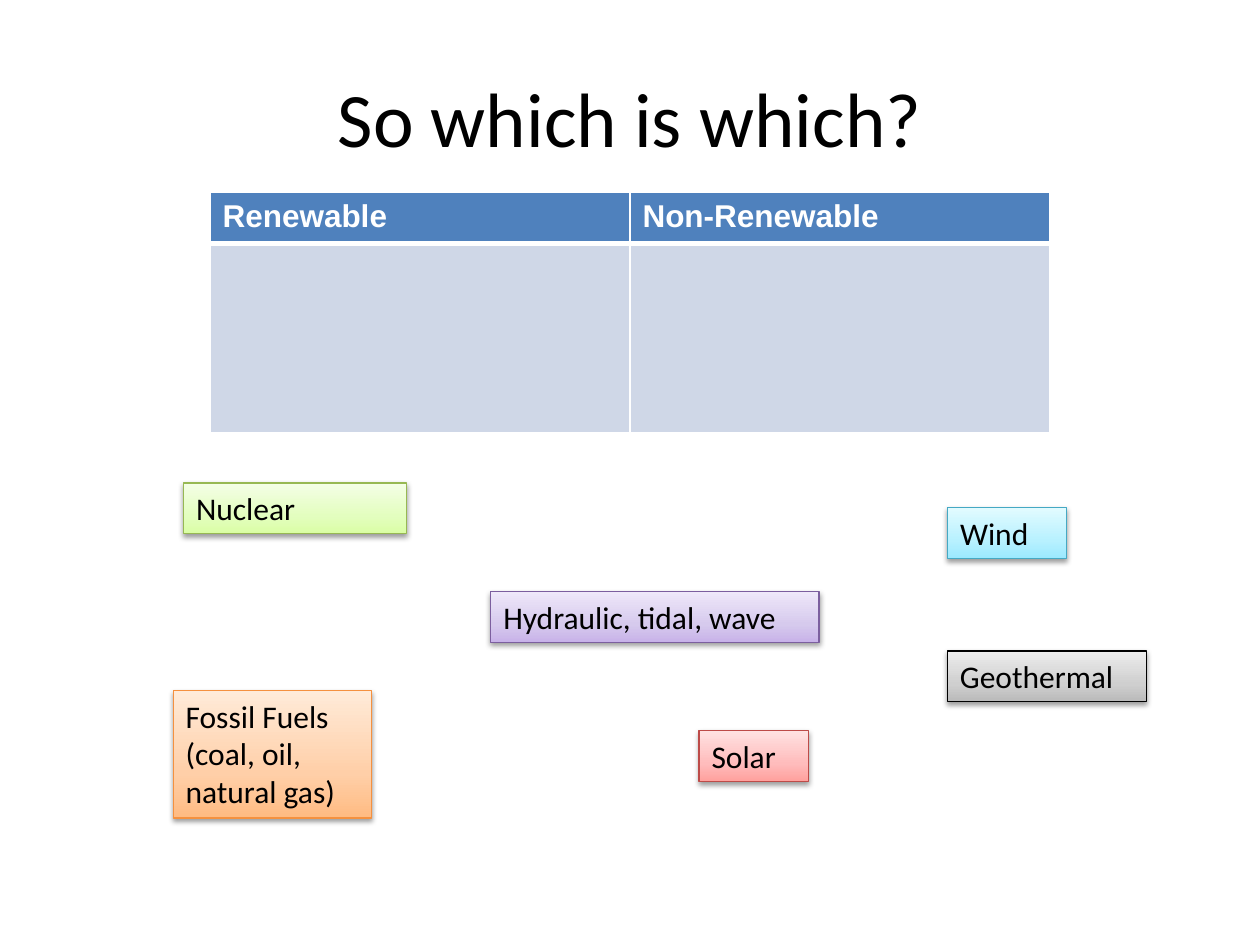
from copy import deepcopy

from lxml.etree import SubElement
from pptx import Presentation
from pptx.dml.color import RGBColor
from pptx.enum.shapes import MSO_SHAPE as Shape
from pptx.enum.text import MSO_ANCHOR as Anchor, PP_ALIGN as Align
from pptx.oxml.ns import qn
from pptx.util import Pt

COLORS = {
    "black": "000000",
    "white": "FFFFFF",
    "header": "4F81BD",
    "body": "CFD7E7",
}
CARD_COLORS = {
    "green": ("DAFEA4", "E3FEBF", "F4FEE6", "97B853"),
    "purple": ("C8B2E9", "D6CAED", "EFE8FA", "7C5F9F"),
    "red": ("FFA09D", "FFBCBC", "FFE2E2", "BD4B48"),
    "blue": ("9BE9FF", "B8F1FF", "E2FBFF", "45A9C4"),
    "orange": ("FFBB82", "FFCFA8", "FFEBD9", "F5913F"),
    "gray": ("BABABA", "CFCFCF", "EDEDED", "000000"),
}
CARDS = [
    ("Nuclear", "green", (105, 276, 127.5, 29)),
    ("Hydraulic, tidal, wave", "purple", (280.5, 338, 187.5, 29)),
    ("Solar", "red", (399.5, 417.5, 62.5, 29)),
    ("Wind", "blue", (541.5, 290, 68, 29)),
    ("Fossil Fuels (coal, oil, natural gas)", "orange", (99, 394.5, 113.5, 73)),
    ("Geothermal", "gray", (541.5, 372, 113.5, 29)),
]


def rgb(value):
    return RGBColor.from_string(value)


def write(tf, text, size, font="Calibri", color="black", bold=False, align=Align.LEFT):
    tf.text = text
    tf.word_wrap = True
    p = tf.paragraphs[0]
    p.alignment = align
    for r in p.runs:
        r.font.size = Pt(size)
        r.font.name = font
        r.font.bold = bold
        r.font.color.rgb = rgb(COLORS[color])


def add_title(s, box):
    tf = s.shapes.add_textbox(*map(Pt, box)).text_frame
    tf.vertical_anchor = Anchor.MIDDLE
    write(tf, "So which is which?", 44, align=Align.CENTER)


def set_borders(cell, **widths):
    tcPr = cell._tc.get_or_add_tcPr()
    for side in "LRTB":
        ln = SubElement(tcPr, qn(f"a:ln{side}"), w=str(Pt(widths.get(side, 1))))
        fill = SubElement(ln, qn("a:solidFill"))
        SubElement(fill, qn("a:srgbClr"), val=COLORS["white"])


def add_sorting_table(s, box, headings, header_height):
    table = s.shapes.add_table(2, len(headings), *map(Pt, box)).table
    table.rows[0].height = Pt(header_height)
    table.rows[1].height = Pt(box[3] - header_height)
    for col, heading in enumerate(headings):
        header, body = table.cell(0, col), table.cell(1, col)
        write(header.text_frame, heading, 18, "Arial", "white", bold=True)
        set_borders(header, B=3)
        set_borders(body, T=3)
        for cell, color in ((header, "header"), (body, "body")):
            cell.fill.solid()
            cell.fill.fore_color.rgb = rgb(COLORS[color])


def add_shadow(sp):
    sp.shadow.inherit = False
    effects = sp._element.spPr.find(qn("a:effectLst"))
    shadow = SubElement(effects, qn("a:outerShdw"), blurRad=str(Pt(3.1)),
                        dist=str(Pt(1.6)), dir="5400000", rotWithShape="0")
    color = SubElement(shadow, qn("a:srgbClr"), val=COLORS["black"])
    SubElement(color, qn("a:alpha"), val="38000")


def set_gradient(sp, colors):
    sp.fill.gradient()
    sp.fill.gradient_angle = 90
    first = sp._element.spPr.find(".//" + qn("a:gs"))
    first.addnext(deepcopy(first))
    for stop, position, color in zip(sp.fill.gradient_stops, (0, 0.35, 1), colors):
        stop.position = position
        stop.color.rgb = rgb(color)


def add_card(s, box, text, color):
    sp = s.shapes.add_shape(Shape.RECTANGLE, *map(Pt, box))
    *stops, line = CARD_COLORS[color]
    set_gradient(sp, stops)
    sp.line.color.rgb = rgb(line)
    sp.line.width = Pt(0.75)
    add_shadow(sp)
    sp.text_frame.vertical_anchor = Anchor.TOP
    write(sp.text_frame, text, 18)


def main():
    prs = Presentation()
    prs.slide_width, prs.slide_height = Pt(720), Pt(540)
    s = prs.slides.add_slide(prs.slide_layouts[6])
    add_title(s, (36, 21.6, 648, 90))
    add_sorting_table(s, (120, 110, 480, 137), ("Renewable", "Non-Renewable"), 29)
    for text, color, box in CARDS:
        add_card(s, box, text, color)
    prs.save("out.pptx")


if __name__ == "__main__":
    main()
